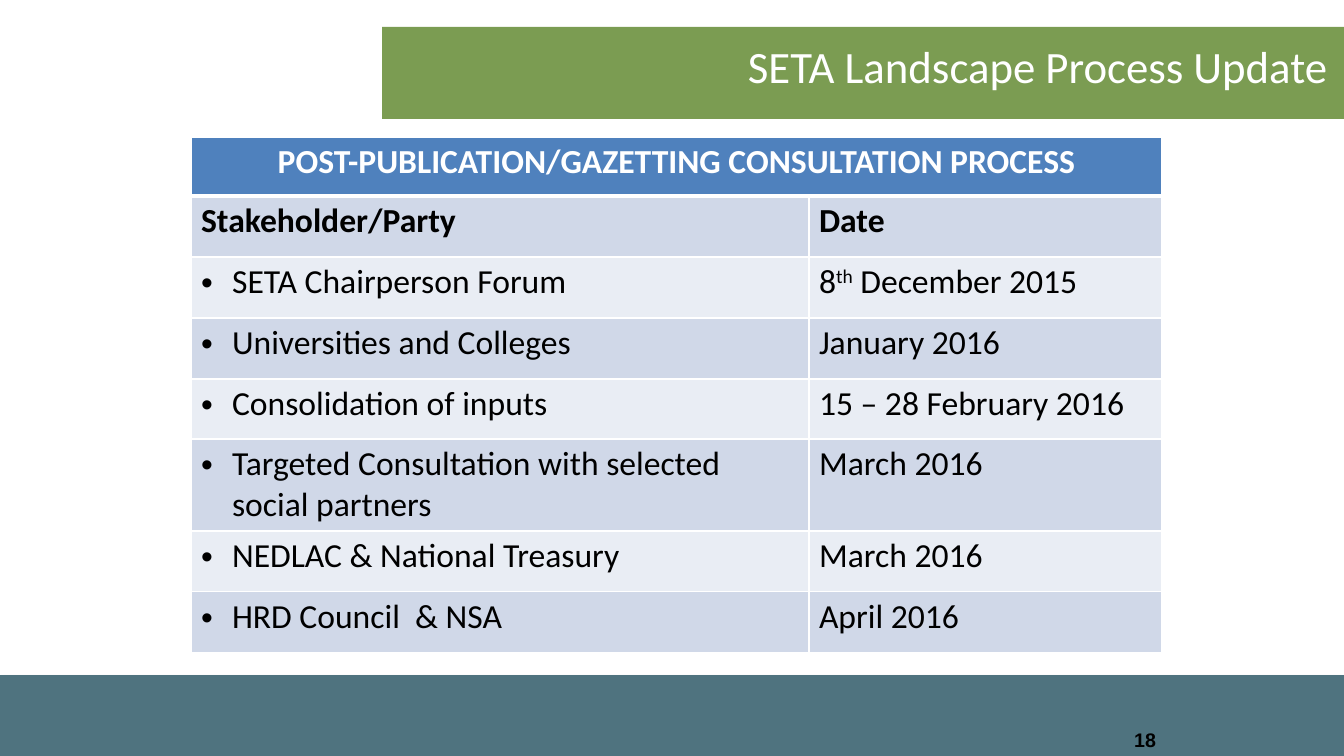
from lxml import etree
from pptx import Presentation
from pptx.dml.color import RGBColor
from pptx.enum.shapes import MSO_SHAPE
from pptx.enum.text import MSO_ANCHOR, PP_ALIGN
from pptx.oxml import parse_xml
from pptx.oxml.ns import nsdecls, qn
from pptx.util import Emu, Pt

RECTANGLE = MSO_SHAPE.RECTANGLE
LEFT, CENTER, RIGHT = PP_ALIGN.LEFT, PP_ALIGN.CENTER, PP_ALIGN.RIGHT
TOP, MIDDLE = MSO_ANCHOR.TOP, MSO_ANCHOR.MIDDLE

EMU_PER_PX = 914400 / 100.8
BULLET_INDENT = 31
COLUMN_WIDTHS = [618, 353]
ROW_HEIGHTS = [59, 61, 61, 61, 60, 92, 61, 61]
ROW_FILLS = ["E9EDF4", "D0D8E8"]

HEADING = "POST-PUBLICATION/GAZETTING CONSULTATION PROCESS"
COLUMN_HEADS = ["Stakeholder/Party", "Date"]
CONSULTATIONS = [
    ("SETA Chairperson Forum", ["8", "^th", " December 2015"]),
    ("Universities and Colleges", ["January 2016"]),
    ("Consolidation of inputs", ["15 – 28 February 2016"]),
    ("Targeted Consultation with selected social partners", ["March 2016"]),
    ("NEDLAC & National Treasury", ["March 2016"]),
    ("HRD Council  & NSA", ["April 2016"]),
]


def px(value):
    return Emu(round(value * EMU_PER_PX))


def color(hex_value):
    return RGBColor.from_string(hex_value)


def add_band(slide, left, top, width, height, fill):
    band = slide.shapes.add_shape(RECTANGLE, px(left), px(top), px(width), px(height))
    band.shadow.inherit = False
    band.fill.solid()
    band.fill.fore_color.rgb = color(fill)
    band.line.fill.background()
    return band


def add_soft_shadow(shape):
    effects = shape._element.spPr.find(qn("a:effectLst"))
    effects.append(parse_xml(
        f'<a:outerShdw {nsdecls("a")} blurRad="{Pt(3.1)}" dist="{Pt(1.8)}" dir="5400000" '
        'rotWithShape="0"><a:srgbClr val="000000"><a:alpha val="35000"/></a:srgbClr></a:outerShdw>'))


def write_runs(paragraph, texts, size, font="Calibri", ink="000000", bold=False, align=LEFT):
    """Add one run per text; a leading ^ makes the run superscript."""
    paragraph.alignment = align
    for text in texts:
        run = paragraph.add_run()
        run.text = text.removeprefix("^")
        run.font.name = font
        run.font.size = Pt(size)
        run.font.bold = bold
        run.font.color.rgb = color(ink)
        if text.startswith("^"):
            run.font._element.set("baseline", "30000")


def add_bullet(paragraph):
    properties = paragraph._p.get_or_add_pPr()
    properties.set("marL", str(px(BULLET_INDENT)))
    properties.set("indent", str(-px(BULLET_INDENT)))
    etree.SubElement(properties, qn("a:buFont"), typeface="Arial")
    etree.SubElement(properties, qn("a:buChar"), char="•")


def style_cell(cell, fill, bottom=1, top=1):
    properties = cell._tc.get_or_add_tcPr()
    for side, width in (("L", 1), ("R", 1), ("T", top), ("B", bottom)):
        properties.append(parse_xml(
            f'<a:ln{side} {nsdecls("a")} w="{Pt(width)}"><a:solidFill>'
            f'<a:srgbClr val="FFFFFF"/></a:solidFill></a:ln{side}>'))
    cell.fill.solid()
    cell.fill.fore_color.rgb = color(fill)


def add_consultation_table(slide, left, top):
    frame = slide.shapes.add_table(
        len(ROW_HEIGHTS), len(COLUMN_WIDTHS), px(left), px(top),
        px(sum(COLUMN_WIDTHS)), px(sum(ROW_HEIGHTS)))
    table = frame.table
    for column, width in zip(table.columns, COLUMN_WIDTHS):
        column.width = px(width)
    for index, (row, height) in enumerate(zip(table.rows, ROW_HEIGHTS)):
        row.height = px(height)
        for cell in row.cells:
            if index == 0:
                style_cell(cell, "4F81BD", bottom=3)
            else:
                style_cell(cell, ROW_FILLS[index % 2], top=3 if index == 1 else 1)

    heading = table.cell(0, 0)
    heading.merge(table.cell(0, 1))
    write_runs(heading.text_frame.paragraphs[0], [HEADING], 24,
               ink="FFFFFF", bold=True, align=CENTER)
    for column, head in enumerate(COLUMN_HEADS):
        write_runs(table.cell(1, column).text_frame.paragraphs[0], [head], 24, bold=True)
    for row, (party, date) in enumerate(CONSULTATIONS, start=2):
        party_line = table.cell(row, 0).text_frame.paragraphs[0]
        add_bullet(party_line)
        write_runs(party_line, [party], 24)
        write_runs(table.cell(row, 1).text_frame.paragraphs[0], date, 24)


def place_title(slide, text, left, top, width, height):
    title = slide.shapes.title
    title.left, title.top, title.width, title.height = map(px, (left, top, width, height))
    title.text_frame.word_wrap = False
    title.text_frame.vertical_anchor = TOP
    write_runs(title.text_frame.paragraphs[0], [text], 32, ink="FFFFFF", align=CENTER)
    slide.shapes._spTree.append(title._element)  # bring in front of the bands


def add_page_number(slide, number, left, top, width, height):
    box = slide.shapes.add_textbox(px(left), px(top), px(width), px(height))
    box.text_frame.word_wrap = True
    box.text_frame.vertical_anchor = MIDDLE
    write_runs(box.text_frame.paragraphs[0], [number], 14, font="Arial", bold=True, align=RIGHT)


def main():
    presentation = Presentation()
    presentation.slide_width, presentation.slide_height = px(1344), px(756)
    slide = presentation.slides.add_slide(presentation.slide_layouts[5])

    footer_band = add_band(slide, 0, 675, 1344, 81, "4F737F")
    add_soft_shadow(footer_band)
    add_band(slide, 382, 27, 964, 92, "7B9C52")
    add_page_number(slide, "18", 931, 720, 235, 40)
    add_consultation_table(slide, 191, 137)
    place_title(slide, "SETA Landscape Process Update", 735, 34, 606, 65)

    presentation.save("out.pptx")


if __name__ == "__main__":
    main()
